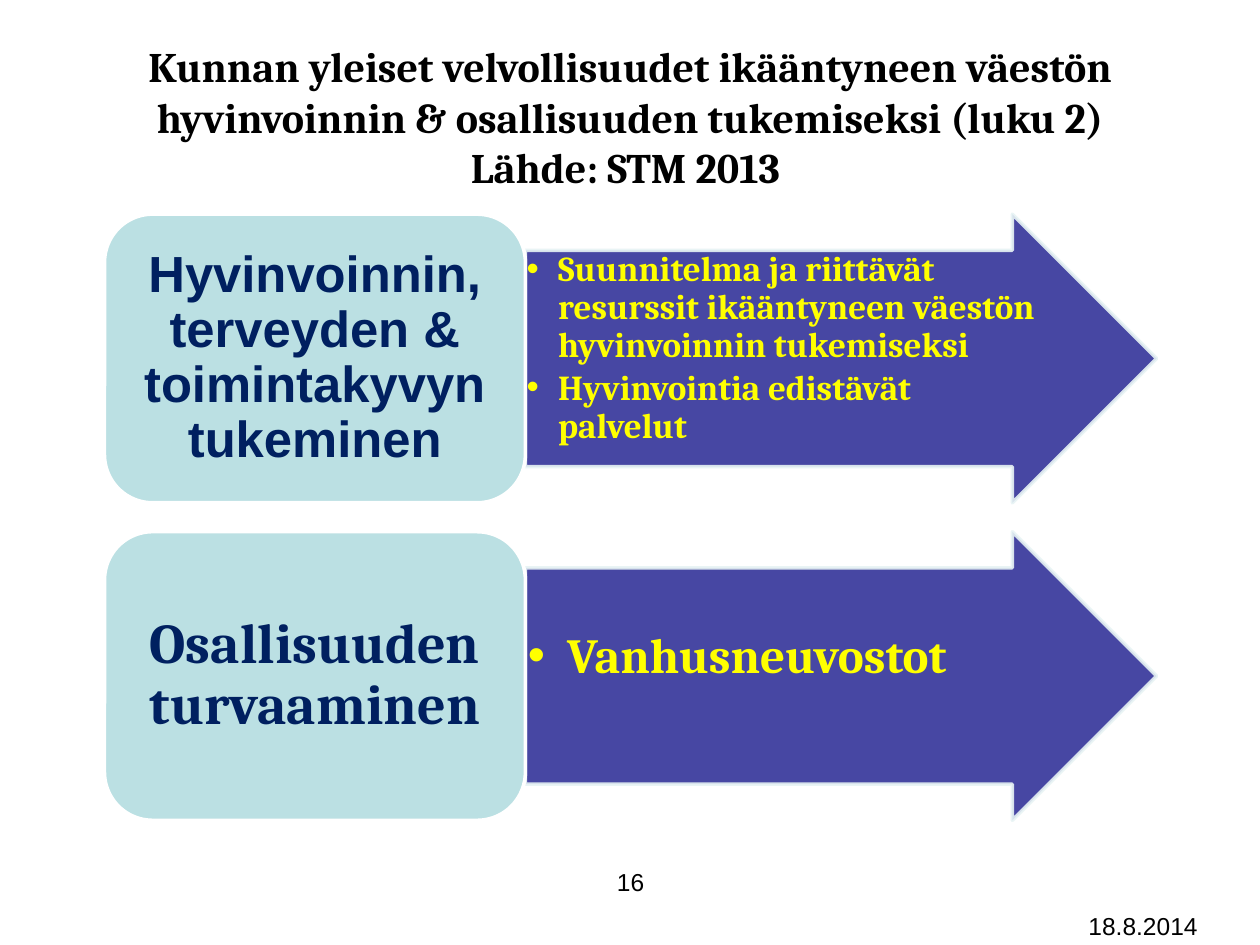
from lxml import etree
from pptx import Presentation, util as u
from pptx.dml.color import RGBColor
from pptx.enum import shapes, text
from pptx.oxml.ns import qn

WIDTH, HEIGHT = 10, 7.5
LEFT, SPLIT, RIGHT = 0.83, 4.17, 9.18
TOP, ROW_HEIGHT, ROW_STEP = 1.7, 2.29, 2.52
SHAFT, LIST_WIDTH = 0.75, 4.15
MIDDLE, UPPER = text.MSO_ANCHOR.MIDDLE, text.MSO_ANCHOR.TOP
CENTER, START = text.PP_ALIGN.CENTER, text.PP_ALIGN.LEFT

ROWS = [
    dict(
        topic=dict(text="Hyvinvoinnin, terveyden & toimintakyvyn tukeminen",
                   size=29, font="Arial", margins=(0.12, 0.06, 0.12, 0.06)),
        duties=dict(text=["Suunnitelma ja riittävät resurssit ikääntyneen väestön "
                          "hyvinvoinnin tukemiseksi",
                          "Hyvinvointia edistävät palvelut"],
                    size=20, indent=0.25, margins=(0.01, 0.01, 0.01, 0.01)),
    ),
    dict(
        topic=dict(text="Osallisuuden turvaaminen",
                   size=32, font="Cambria", margins=(0.13, 0.07, 0.13, 0.07)),
        duties=dict(text=["Vanhusneuvostot"],
                    size=28, indent=0.31, margins=(0.02, 0.5, 0.02, 0.02)),
    ),
]


def color(value):
    """Turn a hex string into a colour."""
    return RGBColor.from_string(value)


def set_alpha(paint, percent):
    """Make the solid colours inside an element partly transparent."""
    for tint in paint.iter(qn("a:srgbClr")):
        etree.SubElement(tint, qn("a:alpha")).set("val", str(percent * 1000))


def add_bullet(para, indent):
    """Give a paragraph a round bullet with a hanging indent."""
    props = para._p.get_or_add_pPr()
    props.set("marL", str(u.Inches(indent)))
    props.set("indent", str(-u.Inches(indent)))
    etree.SubElement(props, qn("a:buFont")).set("typeface", "Arial")
    etree.SubElement(props, qn("a:buChar")).set("char", "•")


def write(box, lines, size=14, font="Arial", ink="000000", bold=False, align=START,
          anchor=UPPER, margins=(0.1, 0.05, 0.1, 0.05), spacing=None, after=0, indent=0):
    """Fill a shape with formatted paragraphs, one for each line."""
    frame = box.text_frame
    frame.word_wrap = True
    frame.auto_size = text.MSO_AUTO_SIZE.NONE
    frame.vertical_anchor = anchor
    (frame.margin_left, frame.margin_top,
     frame.margin_right, frame.margin_bottom) = map(u.Inches, margins)
    for number, line in enumerate(lines):
        para = frame.add_paragraph() if number else frame.paragraphs[0]
        para.text = line
        para.alignment = align
        para.line_spacing = spacing
        para.space_after = u.Pt(after)
        if indent:
            add_bullet(para, indent)
        for span in para.runs:
            span.font.size, span.font.name, span.font.bold = u.Pt(size), font, bold
            span.font.color.rgb = color(ink)


def add_block(page, kind, left, top, width, fill, line, opacity=100):
    """Add one preset shape of row height with its fill and outline."""
    block = page.shapes.add_shape(kind, *map(u.Inches, (left, top, width, ROW_HEIGHT)))
    block.shadow.inherit = False
    block.fill.solid()
    block.fill.fore_color.rgb = color(fill)
    block.line.color.rgb = color(line)
    block.line.width = u.Pt(2)
    if opacity < 100:
        set_alpha(block._element.spPr, opacity)
    return block


def add_label(page, lines, left, top, width, height, **style):
    """Add a text box with the given lines."""
    box = page.shapes.add_textbox(*map(u.Inches, (left, top, width, height)))
    write(box, lines, **style)


def add_row(page, top, topic, duties):
    """Add a topic card and the arrow that lists its duties."""
    arrow = add_block(page, shapes.MSO_SHAPE.RIGHT_ARROW, SPLIT, top, RIGHT - SPLIT,
                      "333399", "E7F3F4", opacity=90)
    arrow.adjustments[0], arrow.adjustments[1] = SHAFT, 0.5
    add_label(page, duties["text"], SPLIT, top + ROW_HEIGHT * (1 - SHAFT) / 2,
              LIST_WIDTH, ROW_HEIGHT * SHAFT, size=duties["size"], font="Cambria",
              ink="FFFF00", bold=True, margins=duties["margins"], spacing=0.9,
              after=duties["size"] * 0.15, indent=duties["indent"])
    card = add_block(page, shapes.MSO_SHAPE.ROUNDED_RECTANGLE, LEFT, top, SPLIT - LEFT,
                     "BBE0E3", "FFFFFF")
    write(card, [topic["text"]], size=topic["size"], font=topic["font"], ink="002060",
          bold=True, align=CENTER, anchor=MIDDLE, margins=topic["margins"], spacing=0.9)


def add_title(page, words):
    """Place and format the title placeholder."""
    title = page.shapes.title
    title.left, title.top = u.Inches(WIDTH * 0.05), u.Inches(HEIGHT * 0.04)
    title.width, title.height = u.Inches(WIDTH * 0.9), u.Inches(1.25)
    write(title, [words], size=24, font="Cambria", bold=True, align=CENTER, anchor=MIDDLE)


def main():
    """Build and save the deck."""
    deck = Presentation()
    deck.slide_width, deck.slide_height = u.Inches(WIDTH), u.Inches(HEIGHT)
    page = deck.slides.add_slide(deck.slide_layouts[5])
    add_title(page, "Kunnan yleiset velvollisuudet ikääntyneen väestön hyvinvoinnin "
                    "& osallisuuden tukemiseksi (luku 2)\vLähde: STM 2013 ")
    add_label(page, ["18.8.2014"], 8.54, 7.18, 1.35, 0.24)
    for number, row in enumerate(ROWS):
        add_row(page, TOP + number * ROW_STEP, **row)
    add_label(page, ["16"], 3.42, 6.83, 3.17, 0.52, align=CENTER)
    deck.save("out.pptx")


if __name__ == "__main__":
    main()
